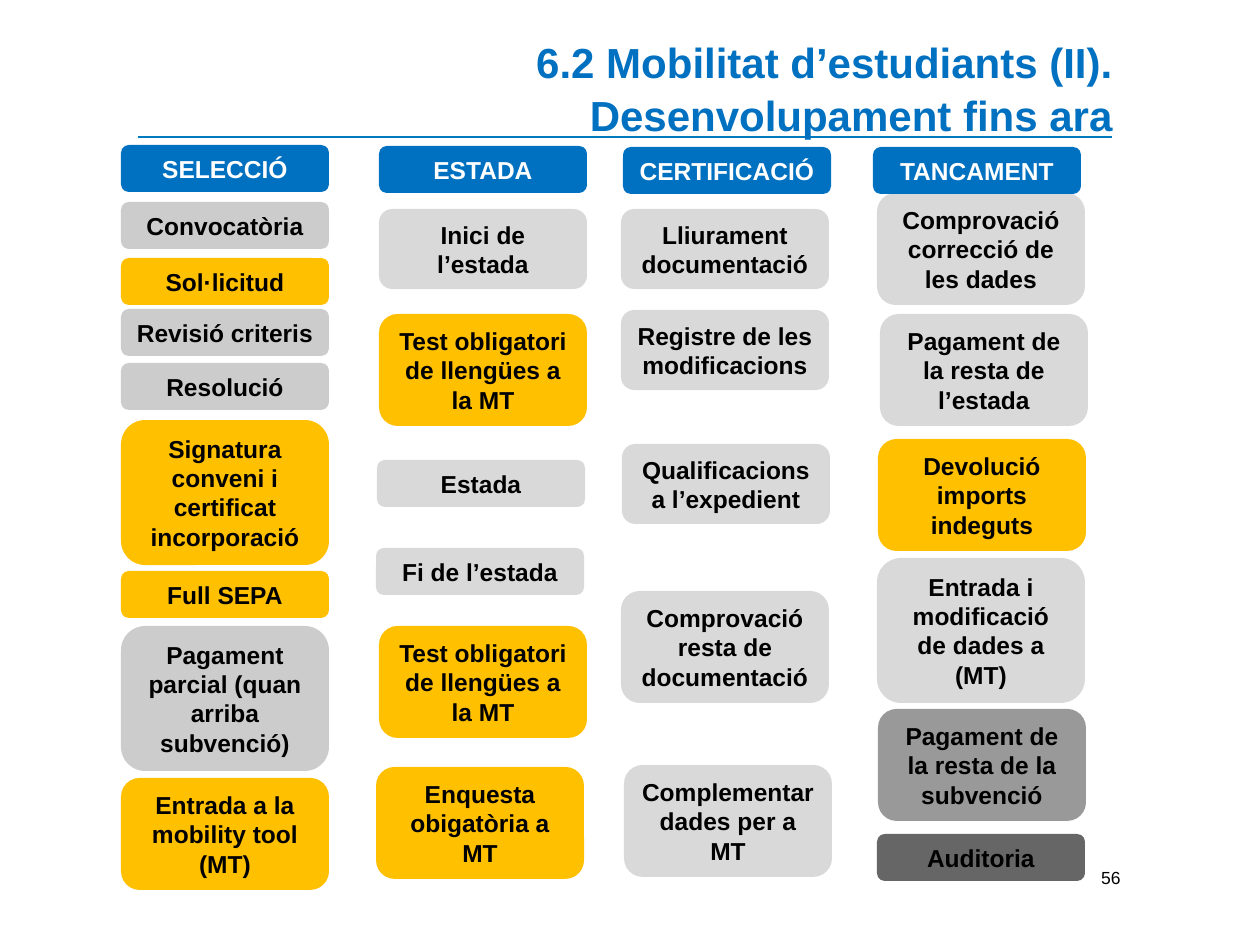
from pptx import Presentation
from pptx.dml.color import RGBColor
from pptx.enum.shapes import MSO_CONNECTOR, MSO_SHAPE
from pptx.enum.text import MSO_ANCHOR, MSO_AUTO_SIZE, PP_ALIGN
from pptx.oxml.ns import qn
from pptx.util import Emu, Pt
from lxml.etree import SubElement

SCALE = 914400 // 126
FONT = "Arial"
BLUE = RGBColor(0x00, 0x70, 0xC0)
RULE_BLUE = RGBColor(0x00, 0x7A, 0xBE)
YELLOW = RGBColor(0xFF, 0xC0, 0x00)
LIGHT = RGBColor(0xD9, 0xD9, 0xD9)
SILVER = RGBColor(0xCC, 0xCC, 0xCC)
GREY = RGBColor(0x99, 0x99, 0x99)
DARK = RGBColor(0x66, 0x66, 0x66)
BLACK = RGBColor(0x00, 0x00, 0x00)
WHITE = RGBColor(0xFF, 0xFF, 0xFF)

BOX_WIDTH = 208
HEIGHT_BY_LINES = {1: 47, 2: 80, 3: 112, 4: 145}

HEADERS = [
    (121, 145, "SELECCIÓ"),
    (379, 146, "ESTADA"),
    (623, 147, "CERTIFICACIÓ"),
    (873, 147, "TANCAMENT"),
]
STEPS = [
    (121, 202, 1, SILVER, "Convocatòria"),
    (121, 258, 1, YELLOW, "Sol·licitud"),
    (121, 309, 1, SILVER, "Revisió criteris"),
    (121, 363, 1, SILVER, "Resolució"),
    (121, 420, 4, YELLOW, "Signatura conveni i certificat incorporació"),
    (121, 571, 1, YELLOW, "Full SEPA"),
    (121, 626, 4, SILVER, "Pagament parcial (quan arriba subvenció)"),
    (121, 778, 3, YELLOW, "Entrada a la mobility tool (MT)"),
    (379, 209, 2, LIGHT, "Inici de l’estada"),
    (379, 314, 3, YELLOW, "Test obligatori de llengües a la MT"),
    (377, 460, 1, LIGHT, "Estada"),
    (376, 548, 1, LIGHT, "Fi de l’estada"),
    (379, 626, 3, YELLOW, "Test obligatori de llengües a la MT"),
    (376, 767, 3, YELLOW, "Enquesta obigatòria a MT"),
    (621, 209, 2, LIGHT, "Lliurament documentació"),
    (621, 310, 2, LIGHT, "Registre de les modificacions"),
    (622, 444, 2, LIGHT, "Qualificacions a l’expedient"),
    (621, 591, 3, LIGHT, "Comprovació resta de documentació"),
    (624, 765, 3, LIGHT, "Complementar dades per a MT"),
    (877, 193, 3, LIGHT, "Comprovació correcció de les dades"),
    (880, 314, 3, LIGHT, "Pagament de la resta de l’estada"),
    (878, 439, 3, YELLOW, "Devolució imports indeguts"),
    (877, 558, 4, LIGHT, "Entrada i modificació de dades a (MT)"),
    (878, 709, 3, GREY, "Pagament de la resta de la subvenció"),
    (877, 834, 1, DARK, "Auditoria"),
]


def px(*lengths):
    """Turn pixel lengths into EMU."""
    return [Emu(length * SCALE) for length in lengths]


def write_text(text_frame, text, size, color, alignment, bold=True):
    """Fill a text frame with uniformly formatted paragraphs."""
    text_frame.word_wrap = True
    text_frame.text = text
    for paragraph in text_frame.paragraphs:
        paragraph.alignment = alignment
        for run in paragraph.runs:
            run.font.name = FONT
            run.font.size = Pt(size)
            run.font.bold = bold
            run.font.color.rgb = color


def add_step(slide, left, top, lines, fill, text, color=BLACK):
    """Add a rounded box whose height follows its number of lines."""
    shape = slide.shapes.add_shape(
        MSO_SHAPE.ROUNDED_RECTANGLE, *px(left, top, BOX_WIDTH, HEIGHT_BY_LINES[lines])
    )
    shape.shadow.inherit = False
    shape.fill.solid()
    shape.fill.fore_color.rgb = fill
    shape.line.fill.background()
    write_text(shape.text_frame, text, 14, color, PP_ALIGN.CENTER)
    shape.text_frame.vertical_anchor = MSO_ANCHOR.MIDDLE
    shape.text_frame.auto_size = MSO_AUTO_SIZE.SHAPE_TO_FIT_TEXT


def add_rule(slide, left, right, top):
    """Add the thin horizontal line under the title."""
    rule = slide.shapes.add_connector(
        MSO_CONNECTOR.STRAIGHT, *px(left, top, right, top)
    )
    rule.line.color.rgb = RULE_BLUE
    rule.line.width = Pt(0.75)
    SubElement(rule._element.spPr, qn("a:effectLst"))


def add_title(slide, text):
    """Add the right-aligned two-line title."""
    title = slide.shapes.add_textbox(*px(372, 26, 753, 110))
    write_text(title.text_frame, text, 24, BLUE, PP_ALIGN.RIGHT)
    title.text_frame.margin_top = px(9)[0]
    for paragraph in title.text_frame.paragraphs:
        paragraph.line_spacing = 1.04


def add_page_number(slide, number):
    """Add the page number at the lower right."""
    box = slide.shapes.add_textbox(*px(916, 861, 217, 66))
    write_text(box.text_frame, number, 10, BLACK, PP_ALIGN.RIGHT, bold=False)


def main():
    """Build and save the slide."""
    presentation = Presentation()
    presentation.slide_width, presentation.slide_height = px(1260, 945)
    slide = presentation.slides.add_slide(presentation.slide_layouts[6])
    add_rule(slide, 138, 1112, 137)
    add_title(slide, "6.2 Mobilitat d’estudiants (II).\nDesenvolupament fins ara")
    for left, top, lines, fill, text in STEPS:
        add_step(slide, left, top, lines, fill, text)
    for left, top, text in HEADERS:
        add_step(slide, left, top, 1, BLUE, text, WHITE)
    add_page_number(slide, "56")
    presentation.save("out.pptx")


if __name__ == "__main__":
    main()
